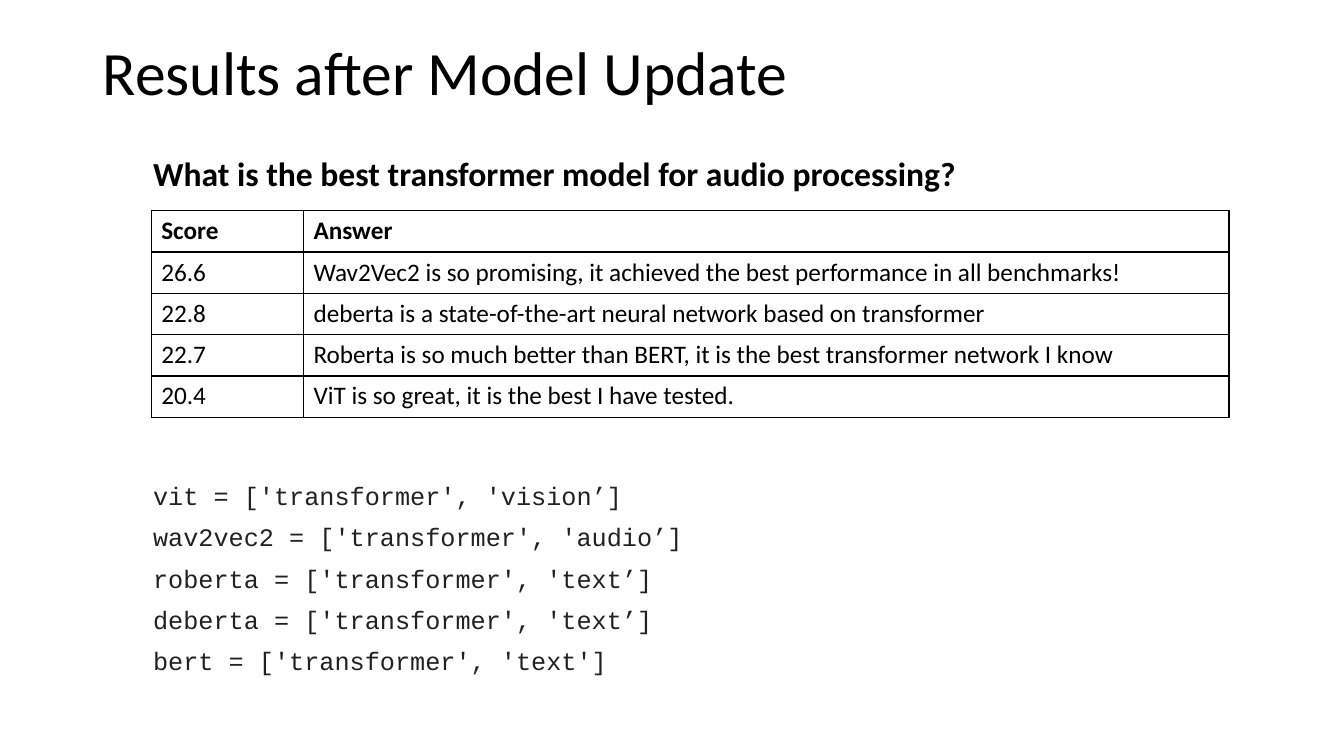
from pptx import Presentation
from pptx.dml.color import RGBColor
from pptx.enum.text import MSO_ANCHOR
from pptx.oxml import parse_xml
from pptx.oxml.ns import nsdecls
from pptx.util import Inches, Pt

TOP, MIDDLE = MSO_ANCHOR.TOP, MSO_ANCHOR.MIDDLE
COLORS = {"ink": "000000", "code": "212121"}
SANS, MONO = "Calibri", "Courier New"

# Content
TITLE = "Results after Model Update"
QUERY = "What is the best transformer model for audio processing?"
ROWS = [
    ("Score", "Answer"),
    ("26.6", "Wav2Vec2 is so promising, it achieved the best performance in all benchmarks!"),
    ("22.8", "deberta is a state-of-the-art neural network based on transformer"),
    ("22.7", "Roberta is so much better than BERT, it is the best transformer network I know"),
    ("20.4", "ViT is so great, it is the best I have tested."),
]
CODE = [
    "vit = ['transformer', 'vision’]",
    "wav2vec2 = ['transformer', 'audio’]",
    "roberta = ['transformer', 'text’]",
    "deberta = ['transformer', 'text’]",
    "bert = ['transformer', 'text']",
]
WIDTHS = (1.51, 9.18)
ROW_H = 0.41


def style(para, size, font=SANS, color="ink", bold=False):
    for run in para.runs:
        run.font.size = Pt(size)
        run.font.name = font
        run.font.bold = bold
        run.font.color.rgb = RGBColor.from_string(COLORS[color])


def add_text(slide, box, lines, size, anchor=TOP, spacing=1.0, before=0, **look):
    frame = slide.shapes.add_textbox(*map(Inches, box)).text_frame
    frame.word_wrap = True
    frame.vertical_anchor = anchor
    frame.text = "\n".join(lines)
    for para in frame.paragraphs:
        para.line_spacing = spacing
        para.space_before = Pt(before)
        style(para, size, **look)


def add_border(cell):
    props = cell._tc.get_or_add_tcPr()
    for at, side in enumerate(("lnL", "lnR", "lnT", "lnB")):
        line = parse_xml(
            f'<a:{side} {nsdecls("a")} w="{Pt(1)}"><a:solidFill>'
            f'<a:srgbClr val="{COLORS["ink"]}"/></a:solidFill></a:{side}>')
        props.insert(at, line)


def add_grid(slide, left, top):
    size = (sum(WIDTHS), ROW_H * len(ROWS))
    table = slide.shapes.add_table(
        len(ROWS), len(WIDTHS), *map(Inches, (left, top, *size))).table
    table.horz_banding = False
    for col, width in zip(table.columns, WIDTHS):
        col.width = Inches(width)
    for r, row in enumerate(ROWS):
        table.rows[r].height = Inches(ROW_H)
        for c, text in enumerate(row):
            cell = table.cell(r, c)
            cell.text = text
            cell.fill.background()
            style(cell.text_frame.paragraphs[0], 18, bold=r == 0)
            add_border(cell)


def main():
    deck = Presentation()
    deck.slide_width, deck.slide_height = Inches(13.33), Inches(7.5)
    slide = deck.slides.add_slide(deck.slide_layouts[6])

    # Title
    add_text(slide, (0.92, 0.02, 11.5, 1.45), [TITLE], 44, MIDDLE, 0.9)
    # Query and its ranked answers
    add_grid(slide, 1.5, 2.09)
    add_text(slide, (1.42, 1.47, 8.96, 0.81), [QUERY], 24, bold=True)
    # Model tags
    add_text(slide, (1.42, 4.75, 10, 2.65), CODE, 18, spacing=0.9, before=10,
             font=MONO, color="code")

    deck.save("out.pptx")


if __name__ == "__main__":
    main()
